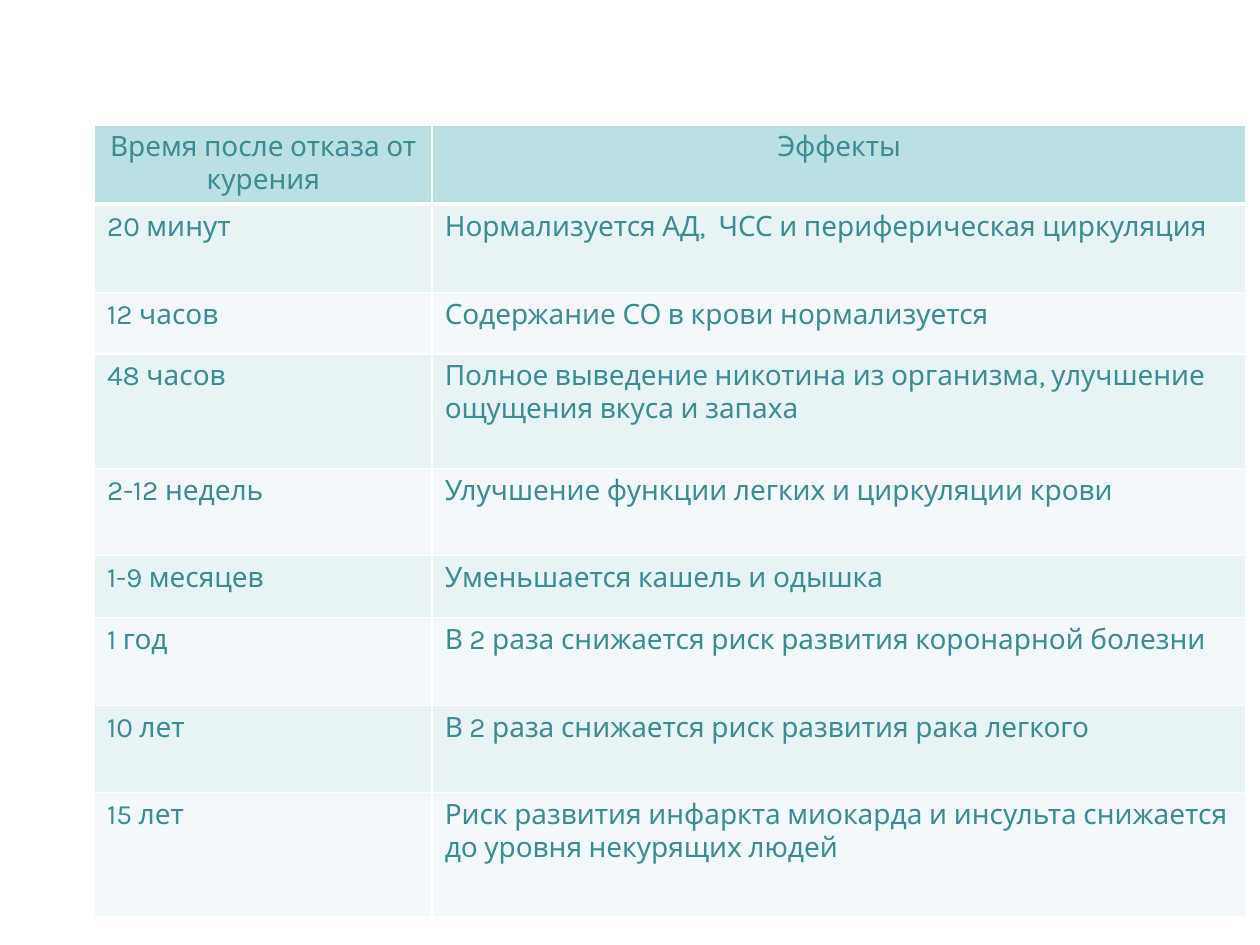
from lxml.etree import SubElement
from pptx import Presentation
from pptx.dml.color import RGBColor
from pptx.enum.text import PP_ALIGN
from pptx.oxml.ns import qn
from pptx.util import Inches, Pt

WIDE, HIGH = 10, 7.5
HEADS = ("Время после отказа от курения", "Эффекты")
# Row height in inches, time, effect
ROWS = (
    (0.7, "20 минут", "Нормализуется АД,  ЧСС и периферическая циркуляция"),
    (0.49, "12 часов", "Содержание СО в крови нормализуется"),
    (0.91, "48 часов", "Полное выведение никотина из организма, "
                       "улучшение ощущения вкуса и запаха"),
    (0.69, "2-12 недель", "Улучшение функции легких и циркуляции крови"),
    (0.49, "1-9 месяцев", "Уменьшается кашель и одышка"),
    (0.7, "1 год", "В 2 раза снижается риск развития коронарной болезни"),
    (0.69, "10 лет", "В 2 раза снижается риск развития рака легкого"),
    (0.99, "15 лет", "Риск развития инфаркта миокарда и инсульта "
                     "снижается до уровня некурящих людей"),
)


def paint(code):
    return RGBColor.from_string(code)


def write(frame, text, size=16, font="Karla", color="3C8C93", align=PP_ALIGN.LEFT):
    para = frame.paragraphs[0]
    para.alignment = align
    run = para.add_run()
    run.text = text
    run.font.name = font
    run.font.size = Pt(size)
    run.font.bold = False
    run.font.color.rgb = paint(color)


class Deck:
    head, bands, rule = "BBE0E3", ("E7F3F4", "F3F9FA"), "FFFFFF"

    def __init__(self):
        self.show = Presentation()
        self.show.slide_width, self.show.slide_height = Inches(WIDE), Inches(HIGH)
        self.slide = self.show.slides.add_slide(self.show.slide_layouts[6])

    def edge(self, cell, side, width):
        line = SubElement(cell._tc.get_or_add_tcPr(), qn(f"a:ln{side}"), w=str(Pt(width)))
        fill = SubElement(line, qn("a:solidFill"))
        SubElement(fill, qn("a:srgbClr"), val=self.rule)

    def cell(self, cell, row, text):
        # Borders come before the fill; the rule under the header is thick
        thick = {(0, "B"), (1, "T")}
        for side in "LRTB":
            self.edge(cell, side, 3 if (row, side) in thick else 1)
        cell.fill.solid()
        cell.fill.fore_color.rgb = paint(self.bands[(row - 1) % 2] if row else self.head)
        write(cell.text_frame, text, align=PP_ALIGN.LEFT if row else PP_ALIGN.CENTER)

    def table(self, left, top, cols, rows):
        """Place a table whose rows are (height, text, text...)."""
        size = sum(cols), sum(row[0] for row in rows)
        grid = self.slide.shapes.add_table(
            len(rows), len(cols), *map(Inches, (left, top, *size))).table
        grid.horz_banding = False
        for col, width in zip(grid.columns, cols):
            col.width = Inches(width)
        for r, (high, *texts) in enumerate(rows):
            grid.rows[r].height = Inches(high)
            for c, text in enumerate(texts):
                self.cell(grid.cell(r, c), r, text)


def main():
    deck = Deck()
    # Effects of quitting, by time
    deck.table(0.075 * WIDE, 0.132 * HIGH, (2.68, 6.46), ((0.63, *HEADS), *ROWS))
    deck.show.save("out.pptx")


if __name__ == "__main__":
    main()
